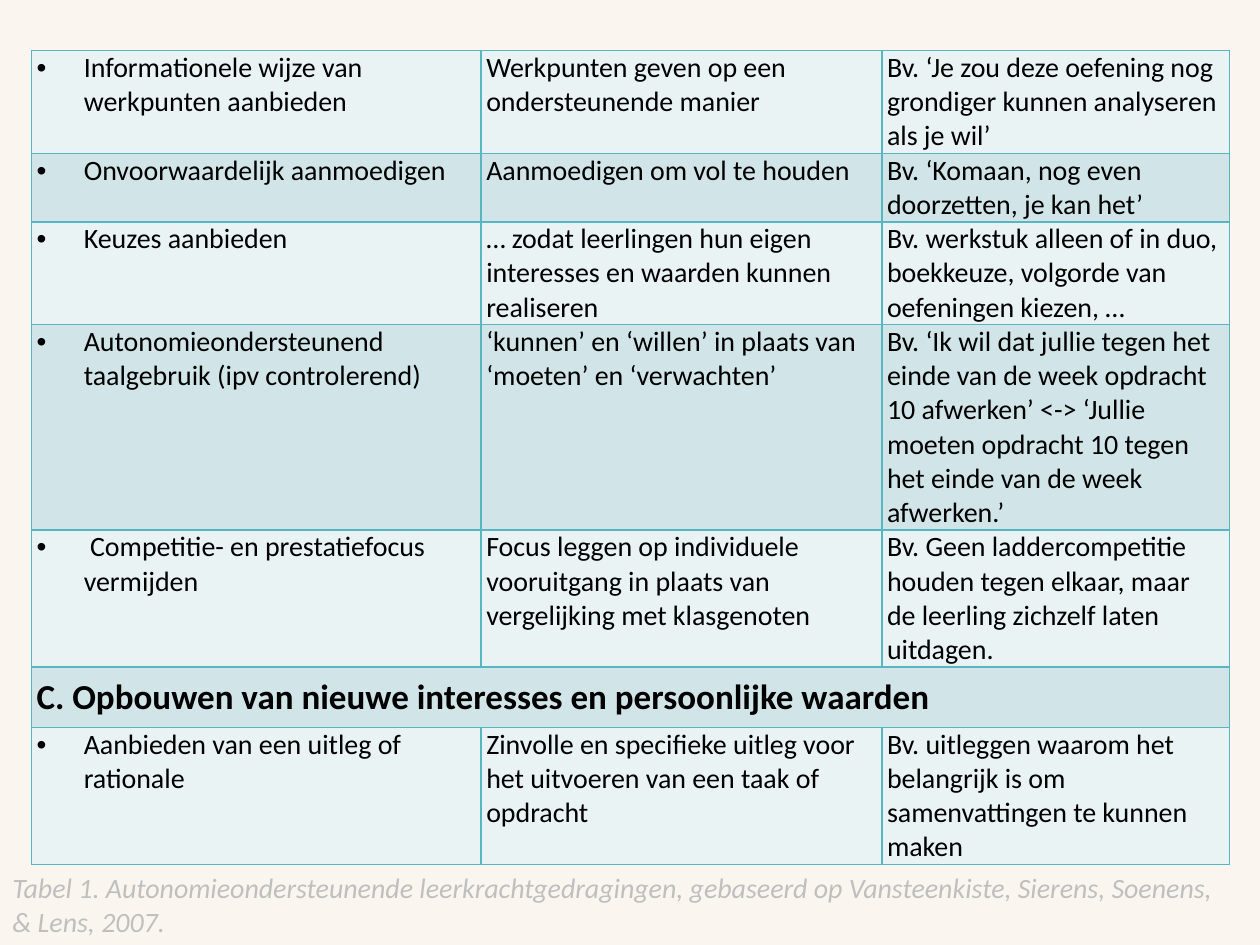
import pptx
import pptx.dml.color
import pptx.enum.text
import pptx.oxml
import pptx.oxml.ns
import pptx.util

Pt = pptx.util.Pt
RGBColor = pptx.dml.color.RGBColor

BACKGROUND = RGBColor(0xFA, 0xF6, 0xEF)
LIGHT_BAND = RGBColor(0xEA, 0xF3, 0xF4)
DARK_BAND = RGBColor(0xD1, 0xE5, 0xE8)
BORDER = RGBColor(0x58, 0xB6, 0xC0)
BLACK = RGBColor(0x00, 0x00, 0x00)
GREY = RGBColor(0xBF, 0xBF, 0xBF)

LINE_HEIGHT = 19.5
COLUMN_WIDTHS = [257, 229, 198.7]
ROWS = [
    (3, ["Informationele wijze van werkpunten aanbieden",
         "Werkpunten geven op een ondersteunende manier",
         "Bv. ‘Je zou deze oefening nog grondiger kunnen analyseren als je wil’"]),
    (2, ["Onvoorwaardelijk aanmoedigen",
         "Aanmoedigen om vol te houden",
         "Bv. ‘Komaan, nog even doorzetten, je kan het’"]),
    (3, ["Keuzes aanbieden",
         "… zodat leerlingen hun eigen interesses en waarden kunnen realiseren",
         "Bv. werkstuk alleen of in duo, boekkeuze, volgorde van oefeningen kiezen, …"]),
    (6, ["Autonomieondersteunend taalgebruik (ipv controlerend)",
         "‘kunnen’ en ‘willen’ in plaats van ‘moeten’ en ‘verwachten’",
         "Bv. ‘Ik wil dat jullie tegen het einde van de week opdracht 10 afwerken’ "
         "<-> ‘Jullie moeten opdracht 10 tegen het einde van de week afwerken.’"]),
    (4, [" Competitie- en prestatiefocus vermijden",
         "Focus leggen op individuele vooruitgang in plaats van vergelijking met klasgenoten",
         "Bv. Geen laddercompetitie houden tegen elkaar, maar de leerling zichzelf laten uitdagen."]),
    (1.77, ["C. Opbouwen van nieuwe interesses en persoonlijke waarden"]),
    (4, ["Aanbieden van een uitleg of rationale",
         "Zinvolle en specifieke uitleg voor het uitvoeren van een taak of opdracht",
         "Bv. uitleggen waarom het belangrijk is om samenvattingen te kunnen maken"]),
]


def write_text(frame, text, size=16, color=BLACK, bold=False, italic=False, bullet=False):
    paragraph = frame.paragraphs[0]
    run = paragraph.add_run()
    run.text = text
    run.font.name = "Calibri"
    run.font.size = Pt(size)
    run.font.bold = bold
    run.font.italic = italic
    run.font.color.rgb = color
    if bullet:
        properties = paragraph._p.get_or_add_pPr()
        properties.set("marL", str(Pt(27)))
        properties.set("indent", str(-Pt(27)))
        for mark in ('a:buFont {} typeface="Arial"', 'a:buChar {} char="•"'):
            xml = mark.format(pptx.oxml.ns.nsdecls("a"))
            properties.append(pptx.oxml.parse_xml(f"<{xml}/>"))


def style_cell(cell, fill):
    cell.margin_left = cell.margin_right = Pt(2.9)
    cell.margin_top = cell.margin_bottom = Pt(0)
    cell.fill.solid()
    cell.fill.fore_color.rgb = fill
    properties = cell._tc.get_or_add_tcPr()
    for position, side in enumerate(("lnL", "lnR", "lnT", "lnB")):
        line = pptx.oxml.parse_xml(
            f'<a:{side} {pptx.oxml.ns.nsdecls("a")} w="{Pt(1)}"><a:solidFill>'
            f'<a:srgbClr val="{BORDER}"/></a:solidFill></a:{side}>')
        properties.insert(position, line)


presentation = pptx.Presentation()
presentation.slide_width = Pt(720)
presentation.slide_height = Pt(540)
slide = presentation.slides.add_slide(presentation.slide_layouts[6])
slide.background.fill.solid()
slide.background.fill.fore_color.rgb = BACKGROUND

table_height = sum(lines for lines, texts in ROWS) * LINE_HEIGHT
table = slide.shapes.add_table(
    len(ROWS), len(COLUMN_WIDTHS),
    Pt(18), Pt(29), Pt(sum(COLUMN_WIDTHS)), Pt(table_height)).table
table.first_row = False
for column, width in zip(table.columns, COLUMN_WIDTHS):
    column.width = Pt(width)

for row_index, (lines, texts) in enumerate(ROWS):
    table.rows[row_index].height = Pt(lines * LINE_HEIGHT)
    cells = table.rows[row_index].cells
    for cell in cells:
        style_cell(cell, DARK_BAND if row_index % 2 else LIGHT_BAND)
    if len(texts) == 1:
        heading = table.cell(row_index, 0)
        heading.merge(table.cell(row_index, len(COLUMN_WIDTHS) - 1))
        heading.vertical_anchor = pptx.enum.text.MSO_ANCHOR.MIDDLE
        write_text(heading.text_frame, texts[0], size=20, bold=True)
    else:
        for column_index, text in enumerate(texts):
            write_text(table.cell(row_index, column_index).text_frame, text,
                       bullet=column_index == 0)

caption = slide.shapes.add_textbox(Pt(0), Pt(494), Pt(702), Pt(46))
caption.text_frame.word_wrap = True
caption.text_frame.auto_size = pptx.enum.text.MSO_AUTO_SIZE.SHAPE_TO_FIT_TEXT
write_text(caption.text_frame,
           "Tabel 1. Autonomieondersteunende leerkrachtgedragingen, gebaseerd op "
           "Vansteenkiste, Sierens, Soenens, & Lens, 2007.",
           color=GREY, italic=True)

presentation.save("out.pptx")
